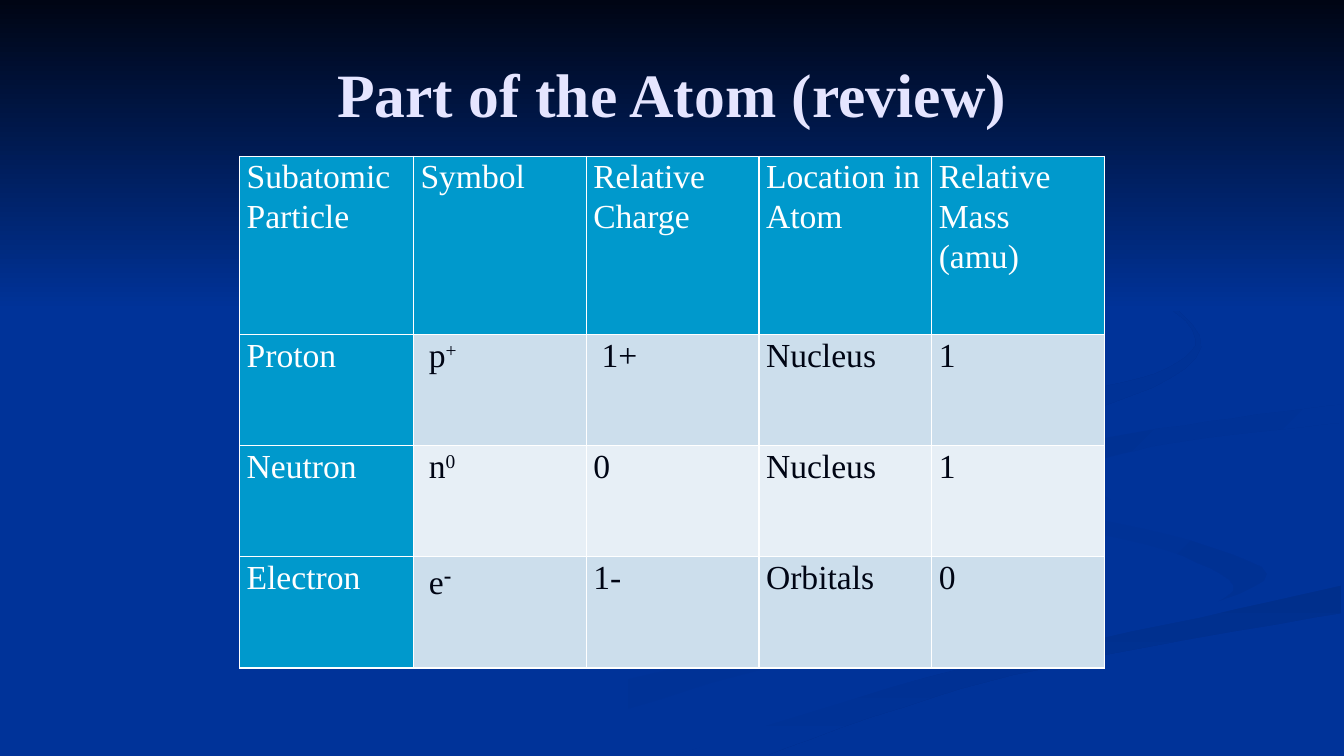
from dataclasses import dataclass

from lxml import etree
from pptx import Presentation
from pptx.dml.color import RGBColor
from pptx.enum import text
from pptx.oxml import ns
from pptx.util import Pt


@dataclass(frozen=True)
class Theme:
    font: str = "Times New Roman"
    background: str = "003399"
    night: str = "000514"
    title: str = "E5E5FF"
    header: str = "0099CC"
    light: str = "FFFFFF"
    bands: tuple = ("CCDEEC", "E7EFF6")
    swirl_shade: str = "003193"
    ribbon_shade: str = "002F8C"
    title_size: int = 44
    cell_size: int = 24
    minus_size: int = 28


theme = Theme()
WIDTH, HEIGHT = 960, 540
CURVE_STEPS = 6


def style(font, size, color, bold=False):
    font.name, font.size, font.bold = theme.font, Pt(size), bold
    font.color.rgb = RGBColor.from_string(color)


def smooth(anchors):
    """Return points on a Catmull-Rom curve that passes through every anchor."""
    padded = [anchors[0], *anchors, anchors[-1]]
    points = [anchors[0]]
    for before, start, end, after in zip(padded, padded[1:], padded[2:], padded[3:]):
        for step in range(1, CURVE_STEPS + 1):
            t = step / CURVE_STEPS
            points.append(tuple(
                (2 * p1 + (p2 - p0) * t + (2 * p0 - 5 * p1 + 4 * p2 - p3) * t ** 2
                 + (3 * p1 - p0 - 3 * p2 + p3) * t ** 3) / 2
                for p0, p1, p2, p3 in zip(before, start, end, after)))
    return points


prs = Presentation()
prs.slide_width, prs.slide_height = Pt(WIDTH), Pt(HEIGHT)
slide = prs.slides.add_slide(prs.slide_layouts[5])
slide.background.fill.solid()
slide.background.fill.fore_color.rgb = RGBColor.from_string(theme.background)

# Each backdrop shape is a loop of edges; the curve bends within an edge and may turn sharply between two
left_swirl = [
    [(552, 330), (589, 357), (686, 380), (750, 398), (768, 418), (726, 442), (541, 479), (347, 539)],
    [(288, 539), (400, 497), (626, 446), (743, 420), (750, 400), (669, 378), (570, 354), (549, 334)]]
right_swirl = [
    [(695, 334), (727, 359), (835, 382), (905, 410), (858, 436)],
    [(858, 436), (881, 418), (833, 393), (734, 369), (695, 338)]]
lower_ribbon = [
    [(483, 539), (605, 499), (765, 459), (958, 418)],
    [(958, 438), (788, 468), (667, 498), (549, 539)]]
wide_ribbon = [
    [(959, 279), (817, 296), (711, 317), (696, 334), (729, 359), (836, 382), (905, 410),
     (834, 440), (636, 481), (458, 539)],
    [(483, 539), (668, 482), (833, 446), (959, 418)],
    [(959, 387), (868, 374), (785, 354), (750, 331), (816, 307), (959, 289)]]
upper_ribbon = [
    [(958, 289), (863, 301), (768, 318), (750, 331), (759, 344), (793, 357)],
    [(793, 357), (773, 340), (794, 326), (860, 313), (958, 302)]]
top_swirl = [
    [(732, 168), (809, 198), (858, 248), (791, 289), (656, 310), (582, 325), (573, 346), (597, 360)],
    [(597, 360), (557, 341), (566, 318), (649, 298), (760, 282), (834, 263), (852, 236),
     (793, 192), (732, 168)]]
night_sky = [[(0, 0), (WIDTH, 0)], [(WIDTH, 222), (0, 222)]]

# Edges, start colour, end colour, clockwise gradient angle
backdrop = [
    (left_swirl, theme.background, theme.swirl_shade, 0),
    (right_swirl, theme.background, theme.swirl_shade, 45),
    (lower_ribbon, theme.ribbon_shade, theme.background, 90),
    (wide_ribbon, theme.background, theme.background, 0),
    (upper_ribbon, theme.swirl_shade, theme.background, 45),
    (top_swirl, theme.ribbon_shade, theme.background, 45),
    (night_sky, theme.night, theme.background, 90),
]
for edges, start_color, end_color, angle in backdrop:
    outline = [point for edge in edges for point in smooth(edge)]
    builder = slide.shapes.build_freeform(*outline[0], scale=Pt(1))
    builder.add_line_segments(outline[1:], close=True)
    swoosh = builder.convert_to_shape()
    swoosh.shadow.inherit = False
    swoosh.line.fill.background()
    swoosh.fill.gradient()
    swoosh.fill.gradient_angle = -angle % 360
    for stop, color in zip(swoosh.fill.gradient_stops, (start_color, end_color)):
        stop.color.rgb = RGBColor.from_string(color)

# Title, brought in front of the backdrop
title = slide.shapes.title
title.element.getparent().append(title.element)
title.left, title.top, title.width, title.height = Pt(48), Pt(21.6), Pt(864), Pt(90)
title.text_frame.text = "Part of the Atom (review)"
title.text_frame.vertical_anchor = text.MSO_ANCHOR.MIDDLE
heading = title.text_frame.paragraphs[0]
heading.alignment = text.PP_ALIGN.CENTER
style(heading.runs[0].font, theme.title_size, theme.title, bold=True)

# Particle table; "^" marks the start of a superscript
particles = [
    ["Subatomic Particle", "Symbol", "Relative Charge", "Location in Atom", "Relative Mass (amu)"],
    ["Proton", " p^+", " 1+", "Nucleus", "1"],
    ["Neutron", " n^0", "0", "Nucleus", "1"],
    ["Electron", " e^-", "1-", "Orbitals", "0"],
]
column_widths = [124.2] + [123.4] * 4
row_heights = [127.4] + [79.4] * 3
table = slide.shapes.add_table(
    len(particles), len(column_widths), Pt(171.2), Pt(111.6),
    Pt(sum(column_widths)), Pt(sum(row_heights))).table
for column, width in zip(table.columns, column_widths):
    column.width = Pt(width)
for row, height in zip(table.rows, row_heights):
    row.height = Pt(height)

for r, values in enumerate(particles):
    for c, value in enumerate(values):
        cell = table.cell(r, c)
        is_header = r == 0 or c == 0

        # Borders come before the fill in the cell's XML
        for side in "LRTB":
            border = etree.SubElement(
                cell._tc.get_or_add_tcPr(), ns.qn(f"a:ln{side}"), w=str(Pt(1)))
            border_fill = etree.SubElement(border, ns.qn("a:solidFill"))
            etree.SubElement(border_fill, ns.qn("a:srgbClr"), val=theme.light)
        cell.fill.solid()
        cell.fill.fore_color.rgb = RGBColor.from_string(
            theme.header if is_header else theme.bands[(r - 1) % 2])
        cell.margin_left = cell.margin_right = Pt(5)
        cell.margin_top = cell.margin_bottom = Pt(0)

        base, _, superscript = value.partition("^")
        entry = cell.text_frame.paragraphs[0]
        entry.text = base
        entry.line_spacing = 1.07
        text_color = theme.light if is_header else theme.night
        style(entry.runs[0].font, theme.cell_size, text_color)
        if superscript:
            charge = entry.add_run()
            charge.text = superscript
            is_minus = superscript == "-"
            charge_size = theme.minus_size if is_minus else theme.cell_size
            style(charge.font, charge_size, text_color, bold=is_minus)
            charge._r.get_or_add_rPr().set("baseline", "30000")

prs.save("out.pptx")
